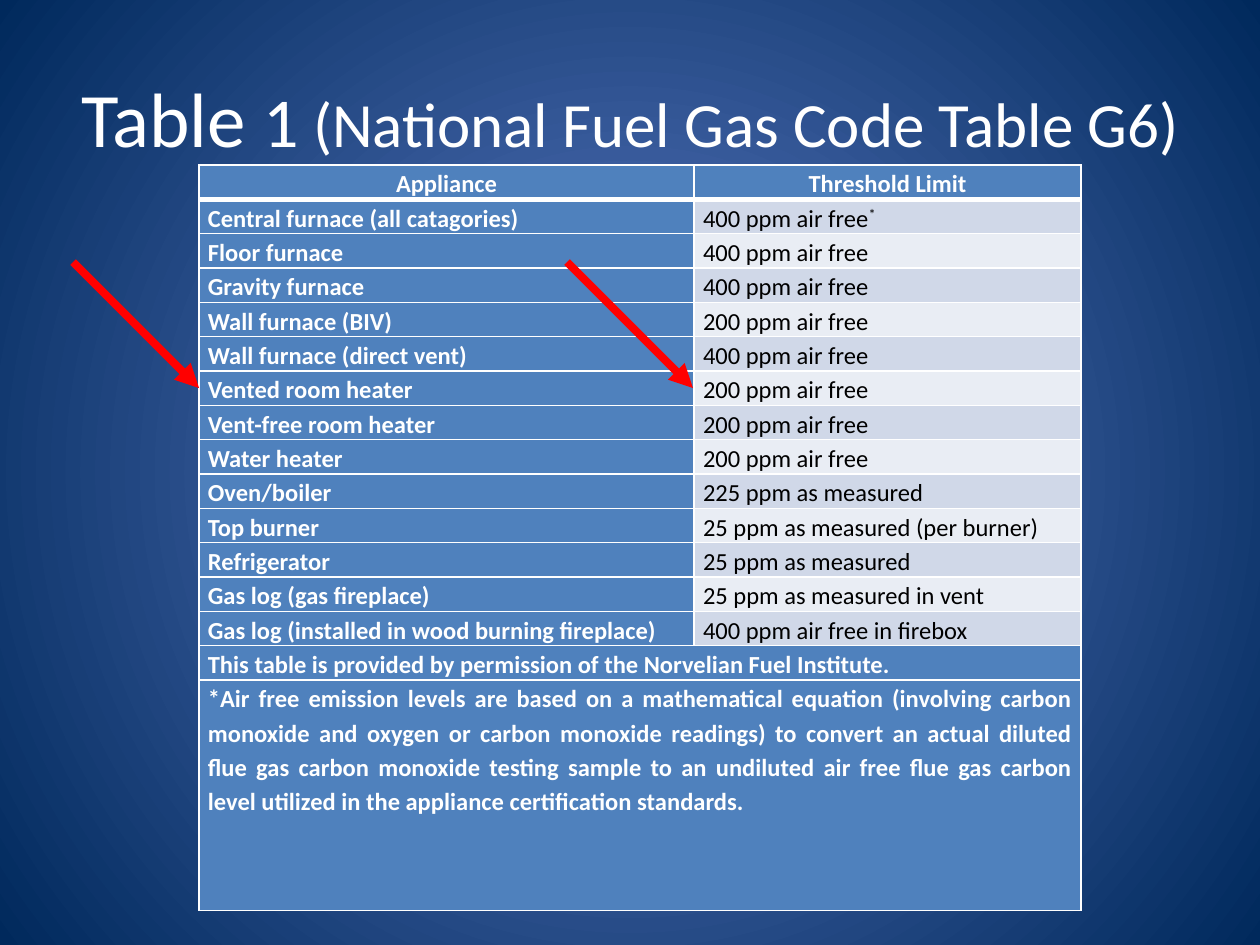
from pptx import Presentation
from pptx.dml.color import RGBColor as RGB
from pptx.enum.shapes import MSO_CONNECTOR as LINE
from pptx.enum.text import MSO_ANCHOR as ANCHOR, PP_ALIGN as ALIGN
from pptx.oxml import parse_xml
from pptx.oxml.ns import nsdecls, qn
from pptx.util import Inches, Pt

WHITE = RGB(0xFF, 0xFF, 0xFF)
BLACK = RGB(0, 0, 0)
RED = RGB(0xFF, 0, 0)
BLUE = RGB(0x4F, 0x81, 0xBD)
BANDS = RGB(0xD0, 0xD8, 0xE8), RGB(0xE9, 0xED, 0xF4)
GLOW = RGB(0x5E, 0x7C, 0xC5)
NAVY = RGB(0, 0x29, 0x5C)

HEAD = ("Appliance", "Threshold Limit")
LIMITS = [
    ("Central furnace (all catagories)", "400 ppm air free"),
    ("Floor furnace", "400 ppm air free"),
    ("Gravity furnace", "400 ppm air free"),
    ("Wall furnace (BIV)", "200 ppm air free"),
    ("Wall furnace (direct vent)", "400 ppm air free"),
    ("Vented room heater", "200 ppm air free"),
    ("Vent-free room heater", "200 ppm air free"),
    ("Water heater", "200 ppm air free"),
    ("Oven/boiler", "225 ppm as measured"),
    ("Top burner", "25 ppm as measured (per burner)"),
    ("Refrigerator", "25 ppm as measured"),
    ("Gas log (gas fireplace)", "25 ppm as measured in vent"),
    ("Gas log (installed in wood burning fireplace)", "400 ppm air free in firebox"),
]
NOTES = [
    ("This table is provided by permission of the Norvelian Fuel Institute.",),
    ("*Air free emission levels are based on a mathematical equation (involving "
     "carbon monoxide and oxygen or carbon monoxide readings) to convert an actual "
     "diluted flue gas carbon monoxide testing sample to an undiluted air free flue "
     "gas carbon level utilized in the appliance certification standards. ",),
]


def add_run(para, text, size, color, bold=False):
    run = para.add_run()
    run.text = text
    look = {"name": "Calibri", "size": Pt(size), "bold": bold}
    for key, val in look.items():
        setattr(run.font, key, val)
    run.font.color.rgb = color
    return run


def add_edge(cell, side, width):
    """Draw a white border on one side (L, R, T or B) of a cell."""
    cell._tc.get_or_add_tcPr().append(parse_xml(
        f'<a:ln{side} {nsdecls("a")} w="{Pt(width)}"><a:solidFill>'
        f'<a:srgbClr val="{WHITE}"/></a:solidFill></a:ln{side}>'))


prs = Presentation()
prs.slide_width, prs.slide_height = Inches(10), Inches(7.5)
slide = prs.slides.add_slide(prs.slide_layouts[5])

# Background: a glow from the centre
fill = slide.background.fill
fill.gradient()
for stop, color, pos in zip(fill.gradient_stops, (GLOW, NAVY), (0, 1)):
    stop.color.rgb = color
    stop.position = pos
lin = slide.element.find(".//" + qn("a:lin"))
lin.getparent().replace(lin, parse_xml(
    f'<a:path {nsdecls("a")} path="circle">'
    '<a:fillToRect l="50000" t="50000" r="50000" b="50000"/></a:path>'))

# Title
title = slide.shapes.title
place = {"left": 0.5, "top": 0.3, "width": 9, "height": 1.25}
for key, val in place.items():
    setattr(title, key, Inches(val))
title.text_frame.vertical_anchor = ANCHOR.MIDDLE
para = title.text_frame.paragraphs[0]
para.alignment = ALIGN.CENTER
for text, size in (("Table ", 44), ("1", 40), (" (National Fuel Gas Code Table G6)", 36)):
    add_run(para, text, size, WHITE)

# Table
rows = [HEAD, *LIMITS, *NOTES]
table = slide.shapes.add_table(len(rows), 2, Inches(1.58), Inches(1.31),
                               Inches(7), Inches(5.91)).table
for col, width in zip(table.columns, (3.93, 3.07)):
    col.width = Inches(width)
for row in table.rows:
    row.height = Inches(0.27)
table.rows[len(rows) - 1].height = Inches(1.83)

for r, texts in enumerate(rows):
    if len(texts) == 1:
        table.cell(r, 0).merge(table.cell(r, 1))
    for c in range(2):
        cell = table.cell(r, c)
        for side in "LRTB":
            thick = (r, side) in ((0, "B"), (1, "T"))
            add_edge(cell, side, 3 if thick else 1)
        limit = c == 1 and 0 < r <= len(LIMITS)
        cell.fill.solid()
        cell.fill.fore_color.rgb = BANDS[(r - 1) % 2] if limit else BLUE
        inset = {"margin_left": 0.07, "margin_right": 0.07,
                 "margin_top": 0, "margin_bottom": 0}
        for key, val in inset.items():
            setattr(cell, key, Inches(val))
        if c >= len(texts):
            continue
        para = cell.text_frame.paragraphs[0]
        para.line_spacing = 1.15
        if r == 0:
            para.alignment = ALIGN.CENTER
        else:
            para.alignment = ALIGN.LEFT if limit else ALIGN.JUSTIFY
        if len(texts) == 1:
            para.space_after = Pt(5)
        add_run(para, texts[c], 14, BLACK if limit else WHITE, not limit)

star = add_run(table.cell(1, 1).text_frame.paragraphs[0], "*", 14, BLACK)
star.font._element.set("baseline", "30000")

# Arrows to the vented room heater row
for x in (0.58, 4.5):
    arrow = slide.shapes.add_connector(LINE.STRAIGHT, Inches(x), Inches(2.08),
                                       Inches(x + 1), Inches(3.08))
    arrow.line.color.rgb = RED
    arrow.line.width = Pt(4.5)
    arrow.line._get_or_add_ln().append(
        parse_xml(f'<a:tailEnd {nsdecls("a")} type="triangle"/>'))
    arrow._element.spPr.append(parse_xml(f'<a:effectLst {nsdecls("a")}/>'))

prs.save("out.pptx")
